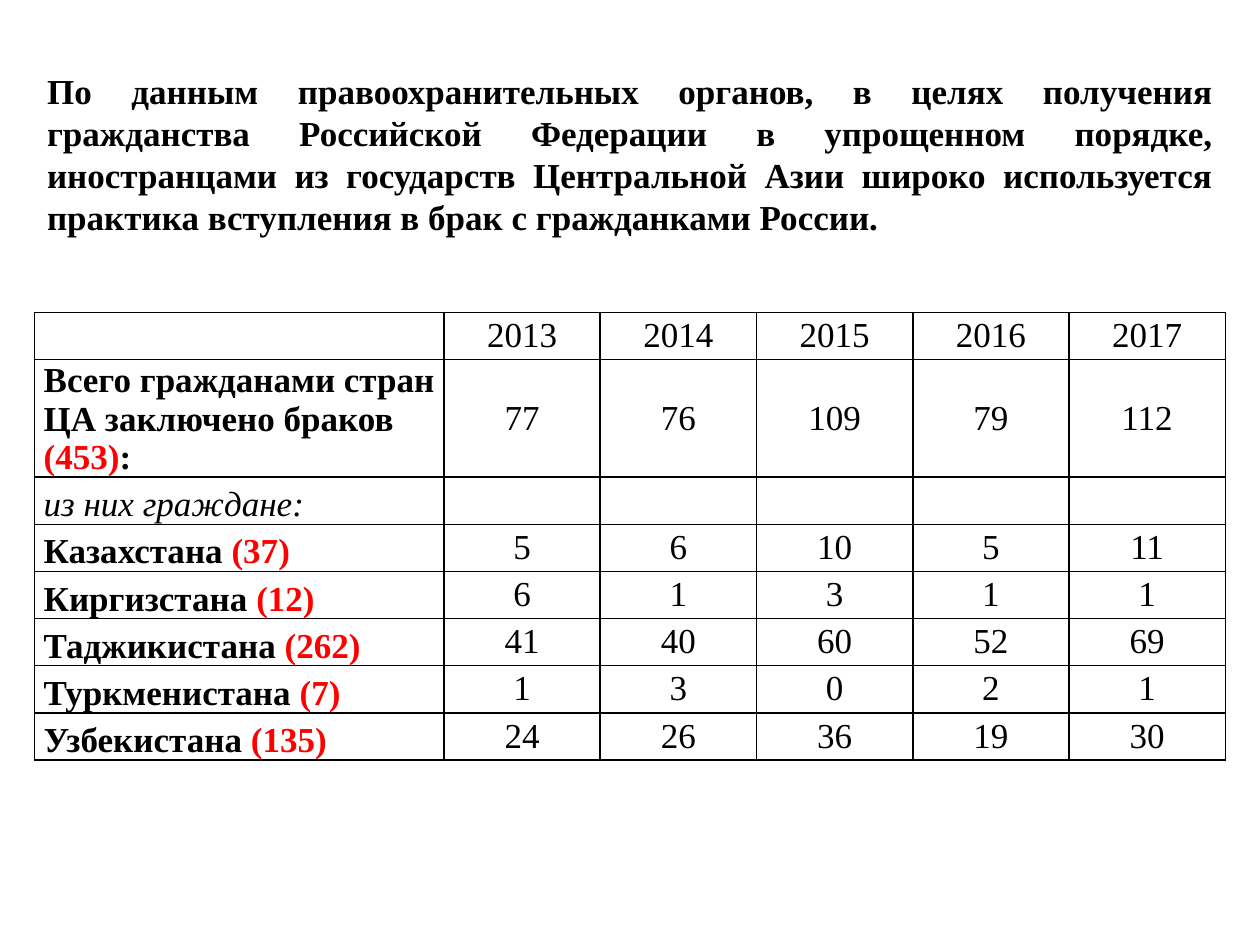
from lxml.etree import SubElement
from pptx import Presentation
from pptx.dml.color import RGBColor
from pptx.enum.text import MSO_ANCHOR, PP_ALIGN
from pptx.oxml.ns import qn
from pptx.util import Cm, Pt

BLACK = RGBColor(0, 0, 0)
RED = RGBColor(255, 0, 0)
FONT = "Times New Roman"
STATEMENT = (
    "По данным правоохранительных органов, в целях получения гражданства "
    "Российской Федерации в упрощенном порядке, иностранцами из государств "
    "Центральной Азии широко используется практика вступления в брак "
    "с гражданками России."
)
YEARS = [2013, 2014, 2015, 2016, 2017]
MARRIAGES = [
    ("Всего гражданами стран ЦА заключено браков ", "(453)", ":", [77, 76, 109, 79, 112]),
    ("из них граждане:", "", "", [""] * len(YEARS)),
    ("Казахстана ", "(37)", "", [5, 6, 10, 5, 11]),
    ("Киргизстана ", "(12)", "", [6, 1, 3, 1, 1]),
    ("Таджикистана ", "(262)", "", [41, 40, 60, 52, 69]),
    ("Туркменистана ", "(7)", "", [1, 3, 0, 2, 1]),
    ("Узбекистана ", "(135)", "", [24, 26, 36, 19, 30]),
]


def write_text(paragraph, text, color=BLACK, bold=False, italic=False,
               align=PP_ALIGN.LEFT, spacing=22):
    paragraph.alignment = align
    paragraph.line_spacing = Pt(spacing)
    paragraph.font.size = Pt(20)
    if not text:
        return
    run = paragraph.add_run()
    run.text = text
    run.font.name = FONT
    run.font.size = Pt(20)
    run.font.bold = bold
    run.font.italic = italic
    run.font.color.rgb = color


def format_cell(cell, anchor):
    cell.margin_left = cell.margin_right = Cm(0.18)
    cell.margin_top = cell.margin_bottom = 0
    cell.vertical_anchor = anchor
    properties = cell._tc.get_or_add_tcPr()
    for side in ("a:lnL", "a:lnR", "a:lnT", "a:lnB"):
        border = SubElement(properties, qn(side), w=str(Pt(1)))
        fill = SubElement(border, qn("a:solidFill"))
        SubElement(fill, qn("a:srgbClr"), val=str(BLACK))
    cell.fill.background()


def add_statement(slide, left, top, width, height):
    shape = slide.shapes.add_textbox(left, top, width, height)
    shape.text_frame.word_wrap = True
    write_text(shape.text_frame.paragraphs[0], STATEMENT, bold=True,
               align=PP_ALIGN.JUSTIFY, spacing=24)


def add_marriage_table(slide, left, top, width, height):
    rows = [("", "", "", YEARS)] + MARRIAGES
    shape = slide.shapes.add_table(len(rows), len(YEARS) + 1, left, top, width, height)
    table = shape.table
    table.first_row = table.horz_banding = False
    label_width = Cm(8.25)
    row_height = Cm(0.95)
    for index, column in enumerate(table.columns):
        column.width = (width - label_width) // len(YEARS) if index else label_width
    for index, row in enumerate(table.rows):
        row.height = height - row_height * (len(rows) - 1) if index == 1 else row_height
    for row_index, (label, total, ending, values) in enumerate(rows):
        label_cell = table.cell(row_index, 0)
        format_cell(label_cell, MSO_ANCHOR.BOTTOM)
        paragraph = label_cell.text_frame.paragraphs[0]
        heading = bool(total)
        write_text(paragraph, label, bold=heading, italic=not heading)
        write_text(paragraph, total, color=RED, bold=True)
        write_text(paragraph, ending, bold=True)
        for column_index, value in enumerate(values, start=1):
            cell = table.cell(row_index, column_index)
            format_cell(cell, MSO_ANCHOR.MIDDLE)
            write_text(cell.text_frame.paragraphs[0], str(value), align=PP_ALIGN.CENTER)


def main():
    presentation = Presentation()
    presentation.slide_width = Cm(25.4)
    presentation.slide_height = Cm(19.05)
    slide = presentation.slides.add_slide(presentation.slide_layouts[6])
    add_marriage_table(slide, Cm(0.7), Cm(6.3), Cm(24), Cm(9.02))
    add_statement(slide, Cm(0.7), Cm(1.27), Cm(24), Cm(3.68))
    presentation.save("out.pptx")


if __name__ == "__main__":
    main()
